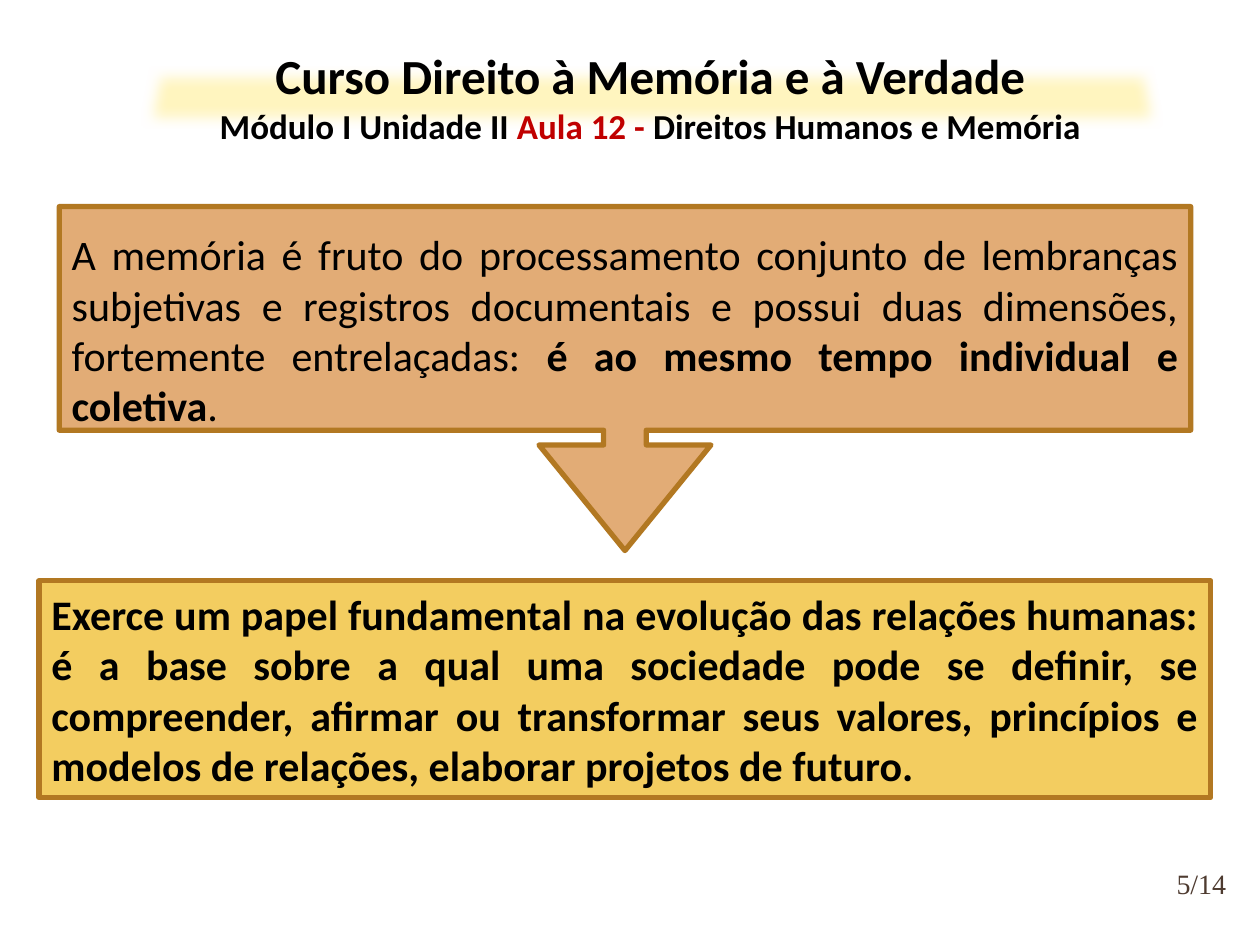
from lxml import etree
from pptx import Presentation, util as u
from pptx.dml.color import RGBColor
from pptx.enum import shapes, text
from pptx.oxml import ns

WIDTH, HEIGHT = u.Inches(10), u.Inches(7.5)
BLACK, RED, BROWN = "000000", "C00000", "4E3B30"
OCHRE, ORANGE, GOLD, PALE_YELLOW = "B27822", "E2AC76", "F3CD60", "FFF5BF"
CENTER, JUSTIFY = text.PP_ALIGN.CENTER, text.PP_ALIGN.JUSTIFY


def color(value):
    return RGBColor.from_string(value)


def place(left, top, width, height):
    """Turn percentages of the slide into lengths."""
    return (int(WIDTH * left / 100), int(HEIGHT * top / 100),
            int(WIDTH * width / 100), int(HEIGHT * height / 100))


def add_span(para, words, size=24, bold=False, fill=BLACK, font="Calibri"):
    span = para.add_run()
    span.text = words
    span.font.name, span.font.size, span.font.bold = font, u.Pt(size), bold
    span.font.color.rgb = color(fill)


def add_para(frame, spans, align=JUSTIFY, first=True):
    para = frame.paragraphs[0] if first else frame.add_paragraph()
    para.alignment = align
    for words, style in spans:
        add_span(para, words, **style)


def add_panel(page, kind, area, fill, line=None, adjustments=()):
    panel = page.shapes.add_shape(kind, *place(*area))
    panel.shadow.inherit = False
    for index, value in enumerate(adjustments):
        panel.adjustments[index] = value
    panel.fill.solid()
    panel.fill.fore_color.rgb = color(fill)
    if line:
        panel.line.color.rgb = color(line)
        panel.line.width = u.Pt(3)
        etree.SubElement(panel.line._get_or_add_ln(), ns.qn("a:round"))
    else:
        panel.line.fill.background()
    return panel


def add_box(page, area, anchor):
    frame = page.shapes.add_textbox(*place(*area)).text_frame
    frame.word_wrap = True
    frame.vertical_anchor = anchor
    return frame


def soften(shape, radius):
    effects = shape._element.spPr.find(ns.qn("a:effectLst"))
    etree.SubElement(effects, ns.qn("a:softEdge"), rad=str(int(radius)))


def add_header(page):
    band = add_panel(page, shapes.MSO_SHAPE.TRAPEZOID, (10.8, 7.07, 81.7, 6.53),
                     PALE_YELLOW, adjustments=[0.2])
    soften(band, u.Inches(0.1))
    frame = add_box(page, (10.2, 4.13, 82.8, 12.13), text.MSO_ANCHOR.TOP)
    add_para(frame, [("Curso Direito à Memória e à Verdade",
                      dict(size=28, bold=True))], CENTER)
    subtitle = dict(size=20, bold=True)
    add_para(frame, [("Módulo I Unidade II ", subtitle),
                     ("Aula 12 - ", dict(subtitle, fill=RED)),
                     ("Direitos Humanos e Memória", subtitle)],
             CENTER, first=False)


def main():
    deck = Presentation()
    deck.slide_width, deck.slide_height = WIDTH, HEIGHT
    page = deck.slides.add_slide(deck.slide_layouts[6])

    # Page number
    number = add_box(page, (92, 90.13, 6.7, 6.67), text.MSO_ANCHOR.MIDDLE)
    number.margin_left = number.margin_right = 0
    number.margin_top = number.margin_bottom = 0
    add_para(number, [("5/14", dict(size=16, fill=BROWN,
                                    font="Times New Roman"))], CENTER)

    # Role of memory in society
    role = add_panel(page, shapes.MSO_SHAPE.RECTANGLE,
                     (3.1, 61.47, 93, 22.93), GOLD, OCHRE).text_frame
    role.word_wrap = True
    add_para(role, [("Exerce um papel fundamental na evolução das relações "
                     "humanas: é a base sobre a qual uma sociedade pode se "
                     "definir, se compreender, afirmar ou transformar seus "
                     "valores, princípios e modelos de relações, elaborar "
                     "projetos de futuro.", dict(bold=True))])

    # Definition of memory, pointing down to its role
    definition = add_panel(page, shapes.MSO_SHAPE.DOWN_ARROW_CALLOUT,
                           (4.7, 21.87, 89.8, 36.4), ORANGE, OCHRE,
                           [0.124, 0.25, 0.307, 0.65]).text_frame
    definition.word_wrap = True
    definition.vertical_anchor = text.MSO_ANCHOR.BOTTOM
    definition.margin_bottom = 0
    add_para(definition, [("A memória é fruto do processamento conjunto de "
                           "lembranças subjetivas e registros documentais e "
                           "possui duas dimensões, fortemente entrelaçadas: ",
                           {}),
                          ("é ao mesmo tempo individual e coletiva",
                           dict(bold=True)),
                          (".", {})])

    # Course title over a soft band
    add_header(page)

    deck.save("out.pptx")


if __name__ == "__main__":
    main()
